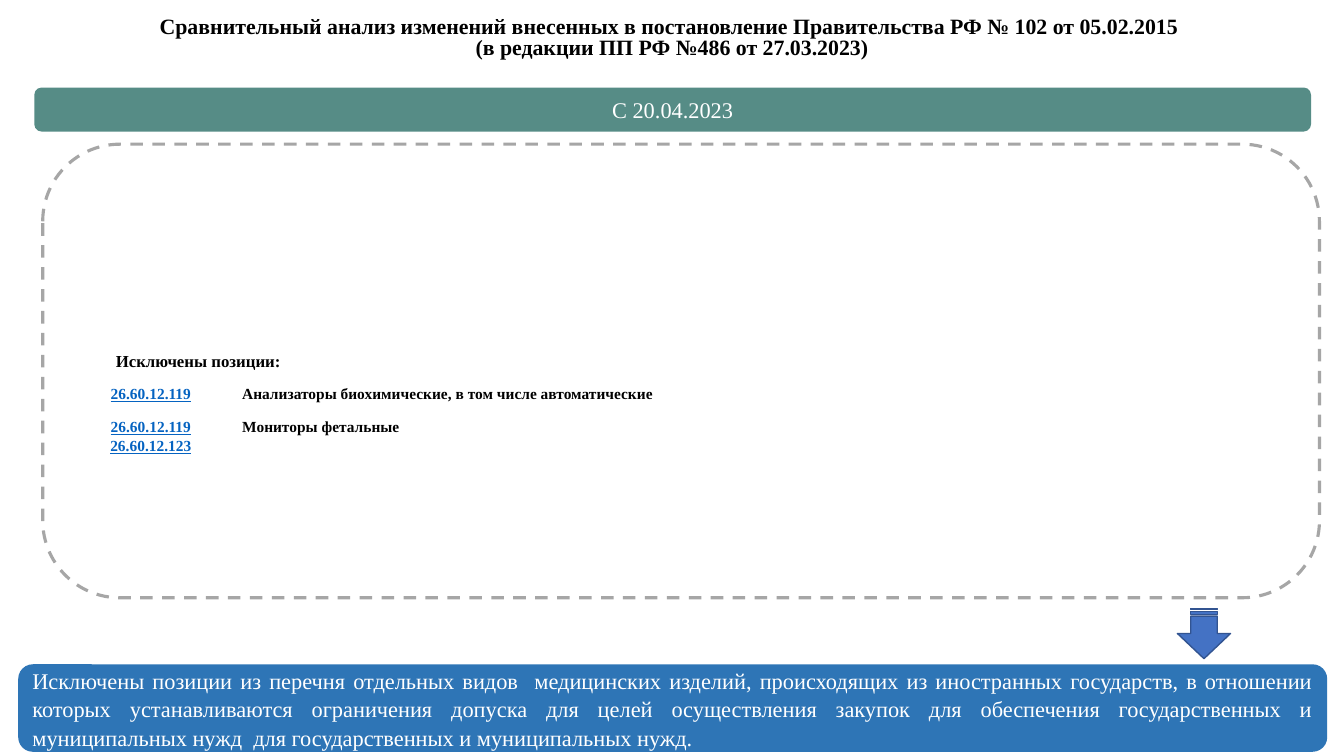
from pptx import Presentation
from pptx.dml.color import RGBColor
from pptx.enum.dml import MSO_LINE_DASH_STYLE as Dash
from pptx.enum.shapes import MSO_SHAPE as Shape
from pptx.enum.text import MSO_ANCHOR as Anchor, PP_ALIGN as Align
from pptx.util import Pt

FONT = "Times New Roman"
BLACK = RGBColor(0x00, 0x00, 0x00)
WHITE = RGBColor(0xFF, 0xFF, 0xFF)
GREY = RGBColor(0xA6, 0xA6, 0xA6)
GREEN = RGBColor(0x56, 0x8C, 0x86)
BLUE = RGBColor(0x2E, 0x75, 0xB6)
ARROW_FILL = RGBColor(0x44, 0x72, 0xC4)
ARROW_LINE = RGBColor(0x32, 0x54, 0x91)
CODE_BLUE = RGBColor(0x05, 0x63, 0xC1)

TITLE = [
    "Сравнительный анализ изменений внесенных в постановление Правительства РФ № 102 от 05.02.2015 ",
    "(в редакции ПП РФ №486 от 27.03.2023)",
]
SUMMARY = (
    "Исключены позиции из перечня отдельных видов  медицинских изделий, "
    "происходящих из иностранных государств, в отношении которых "
    "устанавливаются ограничения допуска для целей осуществления закупок "
    "для обеспечения государственных и муниципальных нужд  "
    "для государственных и муниципальных нужд."
)
EXCLUDED = [
    (270, 23, ["26.60.12.119"], "Анализаторы биохимические, в том числе автоматические"),
    (293.5, 37.5, ["26.60.12.119", "26.60.12.123"], "Мониторы фетальные"),
]


def write(frame, lines, size=16, color=WHITE, bold=False, underline=False,
          align=Align.CENTER, spacing=1.0, indent=0, anchor=Anchor.MIDDLE):
    frame.word_wrap = True
    frame.vertical_anchor = anchor
    for index, line in enumerate(lines):
        para = frame.add_paragraph() if index else frame.paragraphs[0]
        para.alignment = align
        para.line_spacing = spacing
        if indent:
            para._p.get_or_add_pPr().set("indent", str(Pt(indent)))
        span = para.add_run()
        span.text = line
        font = span.font
        font.name, font.size, font.bold = FONT, Pt(size), bold
        font.underline = underline
        font.color.rgb = color


def add_box(page, kind, left, top, width, height, fill=None, line=None, weight=1):
    box = page.shapes.add_shape(kind, Pt(left), Pt(top), Pt(width), Pt(height))
    box.shadow.inherit = False
    if fill is None:
        box.fill.background()
    else:
        box.fill.solid()
        box.fill.fore_color.rgb = fill
    if line is None:
        box.line.fill.background()
    else:
        box.line.color.rgb = line
        box.line.width = Pt(weight)
    return box


def add_excluded(page, top, height, codes, name):
    frame = page.shapes.add_table(1, 2, Pt(45.5), Pt(top), Pt(453.5), Pt(height))
    table = frame.table
    table.first_row = table.horz_banding = False
    table.columns[0].width, table.columns[1].width = Pt(124.5), Pt(329)
    for cell in table.rows[0].cells:
        cell.fill.background()
        cell.margin_left = cell.margin_right = Pt(3)
        cell.margin_top = cell.margin_bottom = Pt(5)
    code_cell, name_cell = table.rows[0].cells
    style = dict(size=11, bold=True, spacing=1.07, anchor=Anchor.TOP)
    write(code_cell.text_frame, codes, color=CODE_BLUE, underline=True, **style)
    write(name_cell.text_frame, [name], color=BLACK, align=Align.LEFT, **style)


def main():
    deck = Presentation()
    deck.slide_width, deck.slide_height = Pt(960), Pt(540)
    page = deck.slides.add_slide(deck.slide_layouts[6])

    panel = add_box(page, Shape.ROUNDED_RECTANGLE, 30.5, 103, 912, 324,
                    line=GREY, weight=2.25)
    panel.adjustments[0] = 0.17
    panel.line.dash_style = Dash.DASH
    panel.text_frame.margin_bottom = Pt(18)
    write(panel.text_frame, ["Исключены позиции:"], size=12, color=BLACK,
          bold=True, align=Align.JUSTIFY, indent=29)

    date_bar = add_box(page, Shape.ROUNDED_RECTANGLE, 24.5, 62.5, 912, 31.5, fill=GREEN)
    write(date_bar.text_frame, ["С 20.04.2023"])

    summary = add_box(page, Shape.ROUNDED_RECTANGLE, 13, 474.5, 935, 62.5, fill=BLUE)
    write(summary.text_frame, [SUMMARY], align=Align.JUSTIFY, spacing=1.07)

    arrow = add_box(page, Shape.STRIPED_RIGHT_ARROW, 842, 433.5, 36, 38,
                    fill=ARROW_FILL, line=ARROW_LINE)
    arrow.rotation = 90

    title = page.shapes.add_textbox(Pt(24), Pt(7), Pt(912), Pt(39.5))
    write(title.text_frame, TITLE, size=15.6, color=BLACK, bold=True,
          spacing=0.8, anchor=Anchor.BOTTOM)

    for position in EXCLUDED:
        add_excluded(page, *position)

    deck.save("out.pptx")


if __name__ == "__main__":
    main()
